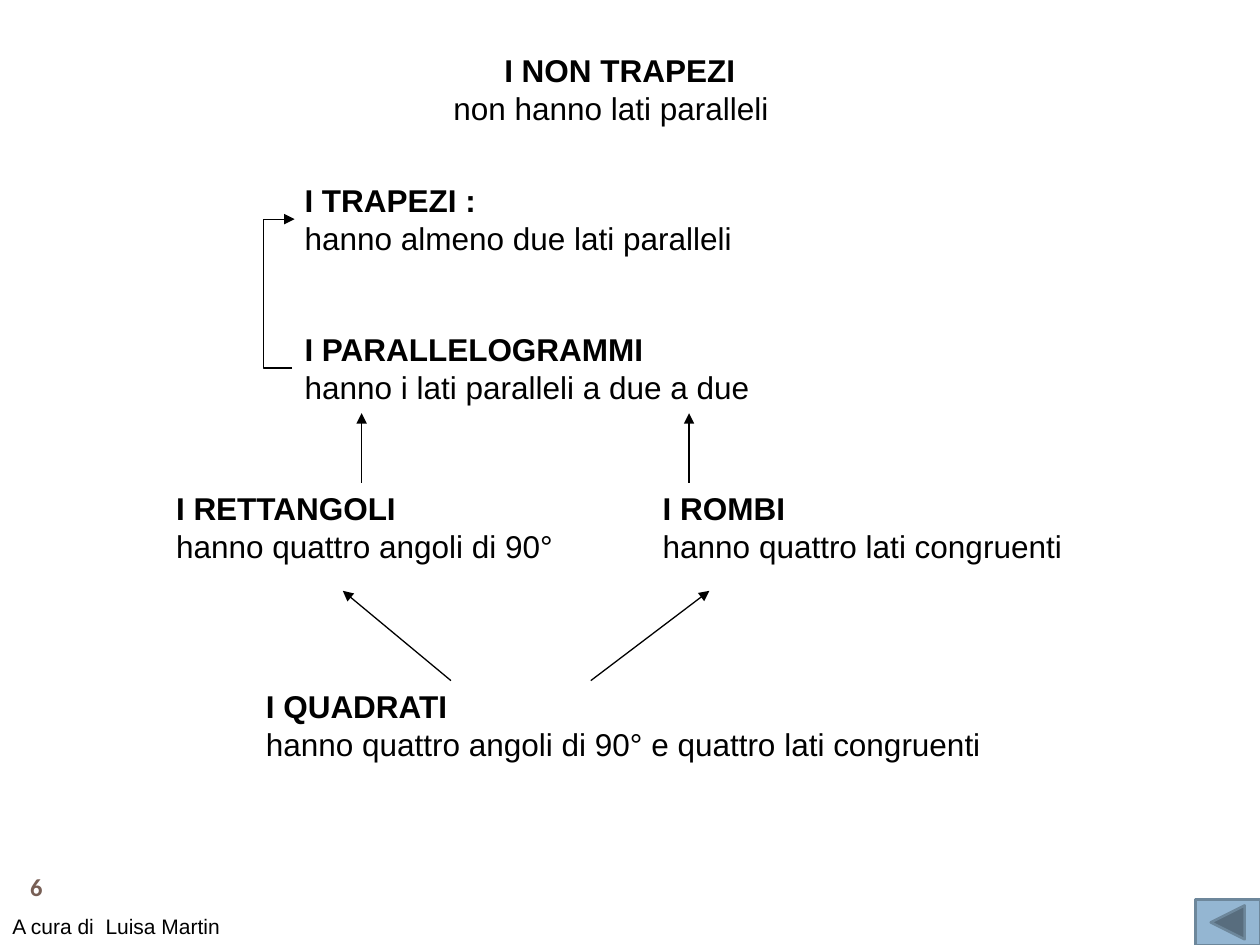
"""Build a slide that maps how the families of quadrilaterals are related."""
import lxml.etree
import pptx
import pptx.dml.color
import pptx.enum.shapes
import pptx.enum.text
import pptx.oxml.ns
import pptx.util

Cm = pptx.util.Cm
Pt = pptx.util.Pt
qn = pptx.oxml.ns.qn
ALIGN = pptx.enum.text.PP_ALIGN
CONNECTOR = pptx.enum.shapes.MSO_CONNECTOR

BLACK = pptx.dml.color.RGBColor(0x00, 0x00, 0x00)
BROWN = pptx.dml.color.RGBColor(0x77, 0x5F, 0x55)
BUTTON_BLUE = pptx.dml.color.RGBColor(0x94, 0xB6, 0xD2)
BUTTON_EDGE = pptx.dml.color.RGBColor(0x6D, 0x87, 0x9B)


def add_text(slide, left, top, width, height, lines, size):
    box = slide.shapes.add_textbox(Cm(left), Cm(top), Cm(width), Cm(height))
    box.text_frame.word_wrap = True
    box.text_frame.text = "\n".join(lines)
    for para in box.text_frame.paragraphs:
        para.font.name = "Arial"
        para.font.size = Pt(size)
        para.font.color.rgb = BLACK
    return box


def add_arrow(slide, kind, start, tip):
    arrow = slide.shapes.add_connector(kind, *map(Cm, start + tip))
    arrow.line.color.rgb = BLACK
    arrow.line.width = Pt(0.75)
    line = arrow.line._get_or_add_ln()
    lxml.etree.SubElement(line, qn("a:tailEnd"), type="triangle")
    lxml.etree.SubElement(arrow._element.spPr, qn("a:effectLst"))
    return arrow


deck = pptx.Presentation()
deck.slide_width = Cm(25.4)
deck.slide_height = Cm(19.05)
slide = deck.slides.add_slide(deck.slide_layouts[6])

families = [
    (8.89, 0.91, 7.21, "I NON TRAPEZI", "non hanno lati paralleli"),
    (5.89, 3.53, 10.01, "I TRAPEZI :", "hanno almeno due lati paralleli"),
    (5.89, 6.53, 10.21, "I PARALLELOGRAMMI", "hanno i lati paralleli a due a due"),
    (3.3, 9.73, 10.59, "I RETTANGOLI", "hanno quattro angoli di 90°"),
    (13.11, 9.73, 8.79, "I ROMBI", "hanno quattro lati congruenti"),
    (5.11, 13.72, 15.21, "I QUADRATI", "hanno quattro angoli di 90° e quattro lati congruenti"),
]
family_boxes = []
for left, top, width, name, rule in families:
    box = add_text(slide, left, top, width, 1.8, [name, rule], 18)
    box.text_frame.paragraphs[0].runs[0].font.bold = True
    family_boxes.append(box)
family_boxes[0].text_frame.paragraphs[0].alignment = ALIGN.CENTER

straight_arrows = [
    ((7.29, 9.73), (7.29, 8.33)),
    ((13.89, 9.73), (13.89, 8.33)),
    ((9.09, 13.72), (6.91, 11.91)),
    ((11.91, 13.72), (14.3, 11.91)),
]
for start, tip in straight_arrows:
    add_arrow(slide, CONNECTOR.STRAIGHT, start, tip)

elbow = add_arrow(slide, CONNECTOR.ELBOW, (5.89, 7.42), (5.94, 4.42))
adjustments = elbow._element.spPr.find(qn("a:prstGeom")).find(qn("a:avLst"))
lxml.etree.SubElement(adjustments, qn("a:gd"), name="adj1", fmla="val -1160000")

number_box = add_text(slide, 0, 17.35, 1.47, 1.07, ["6"], 14)
number_box.text_frame.vertical_anchor = pptx.enum.text.MSO_ANCHOR.MIDDLE
number = number_box.text_frame.paragraphs[0]
number.alignment = ALIGN.CENTER
number.font.name = "Calibri"
number.font.bold = True
number.font.color.rgb = BROWN

add_text(slide, 0, 18.29, 4.8, 0.76, ["A cura di  Luisa Martin"], 12)

back_button = slide.shapes.add_shape(
    pptx.enum.shapes.MSO_SHAPE.ACTION_BUTTON_BACK_OR_PREVIOUS,
    Cm(24.1), Cm(18.14), Cm(1.3), Cm(0.91))
back_button.shadow.inherit = False
back_button.fill.solid()
back_button.fill.fore_color.rgb = BUTTON_BLUE
back_button.line.color.rgb = BUTTON_EDGE
back_button.line.width = Pt(1.5)

deck.save("out.pptx")
